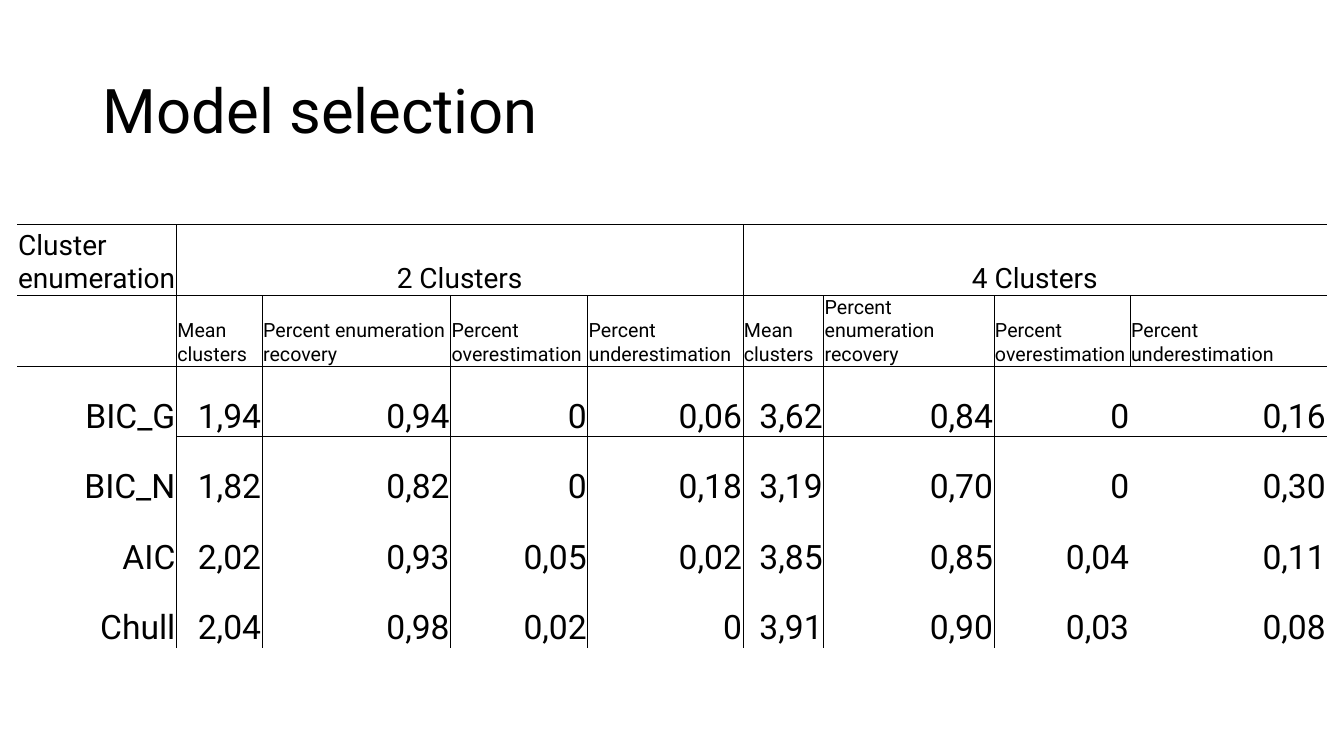
from dataclasses import dataclass

from lxml import etree
from pptx import Presentation
from pptx import util as u
from pptx.dml.color import RGBColor
from pptx.enum import text
from pptx.oxml import ns

SCALE = 9144  # EMU in one px, 100 px to the inch


@dataclass(frozen=True)
class Theme:
    font: str = "Roboto"
    ink: str = "000000"
    title: int = 44
    group: int = 20
    label: int = 14
    value: int = 24
    rule: float = 0.5
    plain: str = "{2D5ABB26-0587-4C30-8999-92F81FD0307C}"  # no style, no grid


@dataclass(frozen=True)
class Entry:
    row: int
    col: int
    words: str
    size: int
    align: text.PP_ALIGN
    span: int = 1


THEME = Theme()
LEFT, MID, RIGHT = text.PP_ALIGN.LEFT, text.PP_ALIGN.CENTER, text.PP_ALIGN.RIGHT

WIDTHS = [56, 102, 85, 187, 136, 154, 80, 169, 135, 195]
HEIGHT = 70
LABELS = ["Mean clusters", "Percent enumeration recovery",
          "Percent overestimation", "Percent underestimation"]
SCORES = {
    "BIC_G": "1,94 0,94 0 0,06 3,62 0,84 0 0,16",
    "BIC_N": "1,82 0,82 0 0,18 3,19 0,70 0 0,30",
    "AIC": "2,02 0,93 0,05 0,02 3,85 0,85 0,04 0,11",
    "Chull": "2,04 0,98 0,02 0 3,91 0,90 0,03 0,08",
}


def px(count: int) -> u.Emu:
    return u.Emu(count * SCALE)


def write(frame, words: str, size: int, align: text.PP_ALIGN) -> None:
    para = frame.paragraphs[0]
    para.alignment = align
    run = para.add_run()
    run.text = words
    run.font.name = THEME.font
    run.font.size = u.Pt(size)
    run.font.color.rgb = RGBColor.from_string(THEME.ink)


def edges(row: int, col: int, end: int) -> list[str]:
    """Sides of a cell, from column col up to end, that carry a rule."""
    stops = {2} if row == 0 else {2, 4, 6, 8}
    tests = {
        "lnL": col in stops,
        "lnR": end in stops,
        "lnT": row < 2 or (row == 2 and col >= 2),
        "lnB": row == 0 or (row == 1 and col >= 2),
    }
    if row == 2 and col < 2:
        tests["lnT"] = False
    return [side for side, drawn in tests.items() if drawn]


def border(cell, sides: list[str]) -> None:
    props = cell._tc.get_or_add_tcPr()
    for side in sides:
        line = etree.SubElement(props, ns.qn(f"a:{side}"), w=str(u.Pt(THEME.rule)))
        fill = etree.SubElement(line, ns.qn("a:solidFill"))
        etree.SubElement(fill, ns.qn("a:srgbClr"), val=THEME.ink)
    cell.fill.background()


def entries() -> list[Entry]:
    found = [Entry(0, 0, "Cluster enumeration", THEME.group, LEFT, 2),
             Entry(0, 2, "2 Clusters", THEME.group, MID, 4),
             Entry(0, 6, "4 Clusters", THEME.group, MID, 4)]
    found += [Entry(1, col, label, THEME.label, LEFT)
              for col, label in enumerate(LABELS * 2, 2)]
    for row, (name, scores) in enumerate(SCORES.items(), 2):
        found.append(Entry(row, 0, name, THEME.value, RIGHT, 2))
        found += [Entry(row, col, score, THEME.value, RIGHT)
                  for col, score in enumerate(scores.split(), 2)]
    return found


def add_title(slide) -> None:
    title = slide.shapes.title
    title.left, title.top, title.width, title.height = map(px, (92, 40, 1150, 145))
    frame = title.text_frame
    frame.auto_size = text.MSO_AUTO_SIZE.NONE
    frame.word_wrap = True
    frame.vertical_anchor = text.MSO_ANCHOR.MIDDLE
    write(frame, "Model selection", THEME.title, LEFT)
    frame.paragraphs[0].line_spacing = 0.9


def add_grid(slide) -> None:
    rows = 2 + len(SCORES)
    frame = slide.shapes.add_table(rows, len(WIDTHS), px(17), px(223),
                                   px(sum(WIDTHS)), px(rows * HEIGHT))
    table = frame.table
    table.first_row = table.horz_banding = False
    table._tbl.tblPr.find(ns.qn("a:tableStyleId")).text = THEME.plain
    for col, width in zip(table.columns, WIDTHS):
        col.width = px(width)
    for row in table.rows:
        row.height = px(HEIGHT)

    # Text and merged cells
    spans = {}
    for item in entries():
        cell = table.cell(item.row, item.col)
        if item.span > 1:
            cell.merge(table.cell(item.row, item.col + item.span - 1))
        spans[item.row, item.col] = item.span
        cell.margin_left = cell.margin_right = cell.margin_top = px(1)
        cell.margin_bottom = 0
        cell.vertical_anchor = text.MSO_ANCHOR.BOTTOM
        write(cell.text_frame, item.words, item.size, item.align)

    # Rules
    for row in range(rows):
        for col in range(len(WIDTHS)):
            end = col + spans.get((row, col), 1)
            border(table.cell(row, col), edges(row, col, end))


def main() -> None:
    deck = Presentation()
    deck.slide_width, deck.slide_height = px(1333), px(750)
    slide = deck.slides.add_slide(deck.slide_layouts[5])
    add_title(slide)
    add_grid(slide)
    deck.save("out.pptx")


if __name__ == "__main__":
    main()
